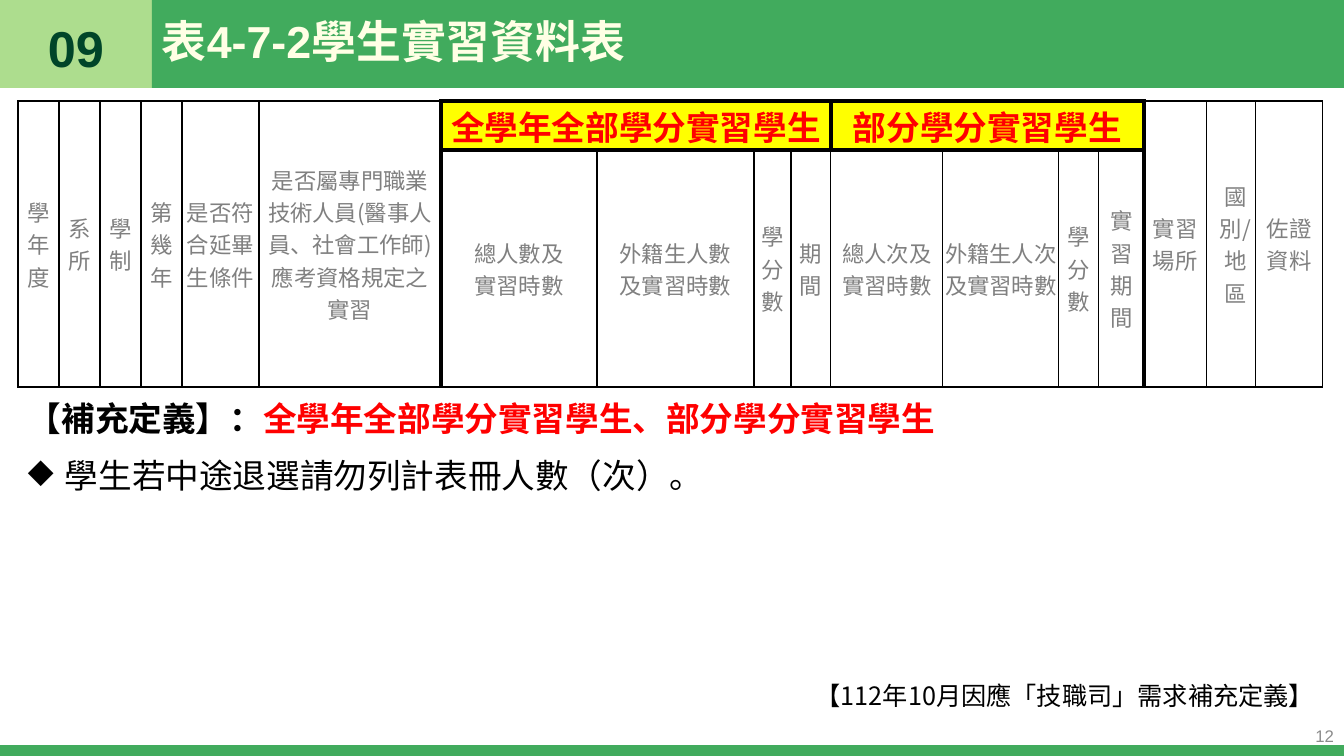
from dataclasses import dataclass

from lxml.etree import SubElement
from pptx import Presentation
from pptx.dml.color import RGBColor
from pptx.enum.shapes import MSO_SHAPE
from pptx.enum.text import MSO_ANCHOR, PP_ALIGN
from pptx.oxml import parse_xml
from pptx.oxml.ns import nsdecls, qn
from pptx.slide import Slide
from pptx.table import Table, _Cell
from pptx.text.text import TextFrame, _Paragraph
from pptx.util import Emu, Pt

PX_PER_INCH = 100.8
LATIN, CJK = "Arial", "Noto Sans CJK SC"
GREEN = RGBColor(0x41, 0xAB, 0x5D)
LIGHT_GREEN = RGBColor(0xAD, 0xDD, 0x8E)
DARK_GREEN = RGBColor(0x00, 0x45, 0x29)
CREAM = RGBColor(0xFF, 0xFF, 0xE5)
GREY = RGBColor(0x80, 0x80, 0x80)
PAGE_GREY = RGBColor(0x8C, 0x8C, 0x8C)
BLACK = RGBColor(0x00, 0x00, 0x00)
WHITE = RGBColor(0xFF, 0xFF, 0xFF)
RED = RGBColor(0xFF, 0x00, 0x00)
YELLOW = RGBColor(0xFF, 0xFF, 0x00)
NO_TABLE_STYLE = "{2D5ABB26-0587-4C30-8999-92F81FD0307C}"

COLUMN_WIDTHS = [41, 41, 41, 41, 77, 182, 156, 157, 37, 40, 112, 116, 40, 45, 63, 49, 67]
ROW_HEIGHTS = [49, 237]
FULL_START, PART_START, GROUP_END = 6, 10, 14


@dataclass
class Box:
    left: int
    top: int
    width: int
    height: int


@dataclass
class Span:
    text: str
    size: int
    color: RGBColor
    bold: bool = False
    font: str = CJK


@dataclass
class Heading:
    row: int
    column: int
    lines: list[str]
    rows: int = 1
    columns: int = 1
    vertical: bool = False

    @property
    def is_group(self) -> bool:
        return self.columns > 1


HEADINGS = [
    *(Heading(0, column, [text], rows=2) for column, text in enumerate(
        ["學年度", "系所", "學制", "第幾年", "是否符合延畢生條件",
         "是否屬專門職業技術人員(醫事人員、社會工作師)應考資格規定之實習"])),
    Heading(0, FULL_START, ["全學年全部學分實習學生"], columns=4),
    Heading(0, PART_START, ["部分學分實習學生"], columns=4),
    *(Heading(1, column, lines) for column, lines in enumerate(
        [["總人數及", "實習時數"], ["外籍生人數", "及實習時數"], ["學分數"], ["期間"],
         ["總人次及", "實習時數"], ["外籍生人次及實習時數"], ["學分數"], ["實習期間"]],
        FULL_START)),
    Heading(0, 14, ["實習場所"], rows=2),
    Heading(0, 15, ["國別/地區"], rows=2, vertical=True),
    Heading(0, 16, ["佐證資料"], rows=2),
]


def px(length: int) -> Emu:
    return Emu(round(length * 914400 / PX_PER_INCH))


def place(box: Box) -> tuple[Emu, Emu, Emu, Emu]:
    return px(box.left), px(box.top), px(box.width), px(box.height)


def add_band(page: Slide, box: Box, color: RGBColor) -> None:
    band = page.shapes.add_shape(MSO_SHAPE.RECTANGLE, *place(box))
    band.shadow.inherit = False
    band.fill.solid()
    band.fill.fore_color.rgb = color
    band.line.fill.background()


def add_span(paragraph: _Paragraph, span: Span) -> None:
    run = paragraph.add_run()
    run.text = span.text
    run.font.size = Pt(span.size)
    run.font.bold = span.bold
    run.font.name = span.font
    run.font.color.rgb = span.color
    SubElement(run.font._element, qn("a:ea")).set("typeface", CJK)


def add_text(page: Slide, box: Box, spans: list[Span],
             align: PP_ALIGN = PP_ALIGN.LEFT,
             anchor: MSO_ANCHOR = MSO_ANCHOR.MIDDLE) -> TextFrame:
    frame = page.shapes.add_textbox(*place(box)).text_frame
    frame.word_wrap = True
    frame.vertical_anchor = anchor
    paragraph = frame.paragraphs[0]
    paragraph.alignment = align
    for span in spans:
        add_span(paragraph, span)
    return frame


def add_bullet(paragraph: _Paragraph, indent: int) -> None:
    properties = paragraph._p.get_or_add_pPr()
    properties.set("marL", str(px(indent)))
    properties.set("indent", str(-px(indent)))
    SubElement(properties, qn("a:buChar")).set("char", "◆")


def border_widths(heading: Heading) -> dict[str, int]:
    """Give each side its width in points: heavy around the two student groups."""
    in_group = FULL_START <= heading.column < GROUP_END
    heavy_columns = {FULL_START, GROUP_END}
    if heading.is_group:
        heavy_columns.add(PART_START)
    heavy = {
        "lnL": heading.column in heavy_columns,
        "lnR": heading.column + heading.columns in heavy_columns,
        "lnT": in_group,
        "lnB": heading.is_group,
    }
    return {side: 3 if is_heavy else 1 for side, is_heavy in heavy.items()}


def set_borders(cell: _Cell, widths: dict[str, int]) -> None:
    properties = cell._tc.get_or_add_tcPr()
    for position, (side, width) in enumerate(widths.items()):
        properties.insert(position, parse_xml(
            f'<a:{side} {nsdecls("a")} w="{Pt(width)}"><a:solidFill>'
            f'<a:srgbClr val="{BLACK}"/></a:solidFill></a:{side}>'))


def fill_heading(table: Table, heading: Heading) -> None:
    cell = table.cell(heading.row, heading.column)
    if heading.rows * heading.columns > 1:
        cell.merge(table.cell(heading.row + heading.rows - 1,
                              heading.column + heading.columns - 1))
    cell.margin_left = cell.margin_right = px(2)
    cell.margin_top = cell.margin_bottom = 0
    cell.vertical_anchor = MSO_ANCHOR.MIDDLE
    cell.fill.solid()
    cell.fill.fore_color.rgb = YELLOW if heading.is_group else WHITE
    set_borders(cell, border_widths(heading))
    frame = cell.text_frame
    for index, line in enumerate(heading.lines):
        paragraph = frame.add_paragraph() if index else frame.paragraphs[0]
        paragraph.alignment = PP_ALIGN.CENTER
        add_span(paragraph, Span(line, 24, RED, True) if heading.is_group
                 else Span(line, 16, GREY))
    if heading.vertical:
        cell._tc.get_or_add_tcPr().set("vert", "eaVert")
        frame.paragraphs[0]._p.get_or_add_pPr().set("marL", str(px(8)))


def add_headings_table(page: Slide) -> None:
    box = Box(18, 101, sum(COLUMN_WIDTHS), sum(ROW_HEIGHTS))
    table = page.shapes.add_table(len(ROW_HEIGHTS), len(COLUMN_WIDTHS), *place(box)).table
    table.first_row = table.horz_banding = False
    table._tbl.tblPr.find(qn("a:tableStyleId")).text = NO_TABLE_STYLE
    for column, width in zip(table.columns, COLUMN_WIDTHS):
        column.width = px(width)
    for row, height in zip(table.rows, ROW_HEIGHTS):
        row.height = px(height)
    for heading in HEADINGS:
        fill_heading(table, heading)


def main() -> None:
    deck = Presentation()
    deck.slide_width, deck.slide_height = px(1344), px(756)
    page = deck.slides.add_slide(deck.slide_layouts[6])

    add_band(page, Box(0, 745, 1344, 11), GREEN)
    add_band(page, Box(0, 0, 152, 88), LIGHT_GREEN)
    add_band(page, Box(152, 0, 1192, 88), GREEN)
    title = add_text(page, Box(152, 0, 1172, 88),
                     [Span("表4-7-2學生實習資料表", 32, CREAM, True, LATIN)])
    title.paragraphs[0].line_spacing = 0.9
    add_text(page, Box(0, 3, 152, 88), [Span("09", 36, DARK_GREEN, True, LATIN)],
             PP_ALIGN.CENTER)
    add_text(page, Box(1041, 716, 303, 40), [Span("12", 12, PAGE_GREY, font=LATIN)],
             PP_ALIGN.RIGHT)

    add_headings_table(page)

    definition = add_text(page, Box(18, 389, 1306, 120), [
        Span("【補充定義】：", 24, BLACK, True),
        Span("全學年全部學分實習學生、部分學分實習學生", 24, RED, True),
    ], anchor=MSO_ANCHOR.TOP)
    rule = definition.add_paragraph()
    add_span(rule, Span("學生若中途退選請勿列計表冊人數（次）。", 24, BLACK, font=LATIN))
    for paragraph, spacing in zip(definition.paragraphs, (1.1, 1.2)):
        paragraph.line_spacing = spacing
        paragraph.space_before = Pt(6)
    add_bullet(rule, 37)
    add_text(page, Box(18, 672, 1306, 46),
             [Span("【112年10月因應「技職司」需求補充定義】", 18, BLACK)], PP_ALIGN.RIGHT)

    deck.save("out.pptx")


if __name__ == "__main__":
    main()
